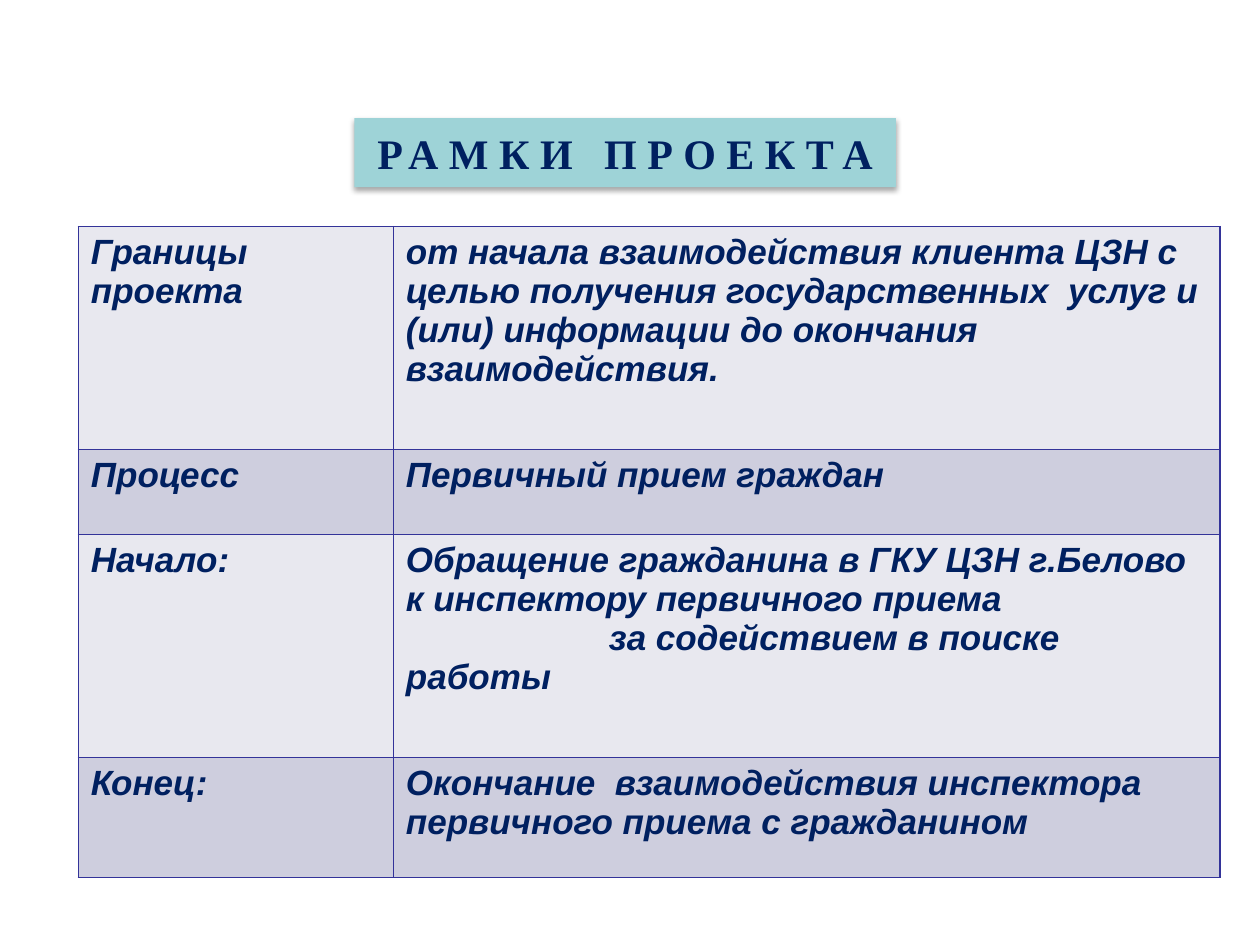
from lxml.etree import SubElement
from pptx import Presentation
from pptx.dml.color import RGBColor
from pptx.enum.text import MSO_ANCHOR, PP_ALIGN
from pptx.oxml import parse_xml
from pptx.oxml.ns import nsdecls, qn
from pptx.util import Pt

COLORS = {"ink": "002060", "banner": "9ED3D7", "border": "333399",
          "light": "E8E8EF", "dark": "CECEDE"}


def rgb(name):
    return RGBColor.from_string(COLORS[name])


def add_text(paragraph, text, font_name, size, italic=False):
    run = paragraph.add_run()
    run.text = text
    run.font.name = font_name
    run.font.size = Pt(size)
    run.font.bold = True
    run.font.italic = italic
    run.font.color.rgb = rgb("ink")
    return run


prs = Presentation()
prs.slide_width, prs.slide_height = Pt(720), Pt(540)
slide = prs.slides.add_slide(prs.slide_layouts[5])

# Title banner with a soft shadow
banner = slide.shapes.title
banner.left, banner.top, banner.width, banner.height = Pt(202.5), Pt(67.5), Pt(309.5), Pt(39.5)
banner.fill.solid()
banner.fill.fore_color.rgb = rgb("banner")
banner.line.fill.background()
banner._element.spPr.append(parse_xml(
    f'<a:effectLst {nsdecls("a")}>'
    f'<a:outerShdw blurRad="{Pt(3.1)}" dist="{Pt(1.8)}" dir="5400000" rotWithShape="0">'
    '<a:srgbClr val="000000"><a:alpha val="35000"/></a:srgbClr>'
    '</a:outerShdw></a:effectLst>'))
banner_text = banner.text_frame
banner_text.margin_left = banner_text.margin_right = 0
banner_text.vertical_anchor = MSO_ANCHOR.MIDDLE
banner_text.paragraphs[0].alignment = PP_ALIGN.CENTER
heading = add_text(banner_text.paragraphs[0], "РАМКИ ПРОЕКТА", "Times New Roman", 24)
heading.font._element.set("spc", "600")

# Project scope: label, then paragraphs as (text, first-line indent)
scope = [
    ("Границы проекта", [("от начала взаимодействия клиента ЦЗН с целью получения "
                          "государственных  услуг и (или) информации до окончания "
                          "взаимодействия.", 0)]),
    ("Процесс", [("Первичный прием граждан", 0)]),
    ("Начало:", [("Обращение гражданина в ГКУ ЦЗН г.Белово к инспектору первичного приема", 0),
                 ("за содействием в поиске работы", 116)]),
    ("Конец:", [("Окончание  взаимодействия инспектора первичного приема с гражданином", 0)]),
]
column_widths = [180, 472.5]
row_heights = [127.5, 48.5, 127.5, 68.5]

scope_table = slide.shapes.add_table(
    len(scope), 2, Pt(44.75), Pt(129.5), Pt(sum(column_widths)), Pt(sum(row_heights))).table
scope_table.first_row = False
for column, width in zip(scope_table.columns, column_widths):
    column.width = Pt(width)

for index, (label, details) in enumerate(scope):
    row = scope_table.rows[index]
    row.height = Pt(row_heights[index])
    for cell, content in zip(row.cells, ([(label, 0)], details)):
        # Borders come before the fill in the cell properties
        properties = cell._tc.get_or_add_tcPr()
        for side in ("lnL", "lnR", "lnT", "lnB"):
            border = SubElement(properties, qn(f"a:{side}"), w=str(Pt(1)))
            SubElement(SubElement(border, qn("a:solidFill")), qn("a:srgbClr"),
                       val=COLORS["border"])
        cell.fill.solid()
        cell.fill.fore_color.rgb = rgb("dark" if index % 2 else "light")

        for number, (text, indent) in enumerate(content):
            frame = cell.text_frame
            paragraph = frame.add_paragraph() if number else frame.paragraphs[0]
            paragraph.alignment = PP_ALIGN.LEFT
            if indent:
                paragraph._p.get_or_add_pPr().set("indent", str(Pt(indent)))
            add_text(paragraph, text, "Arial", 20, italic=True)

prs.save("out.pptx")
